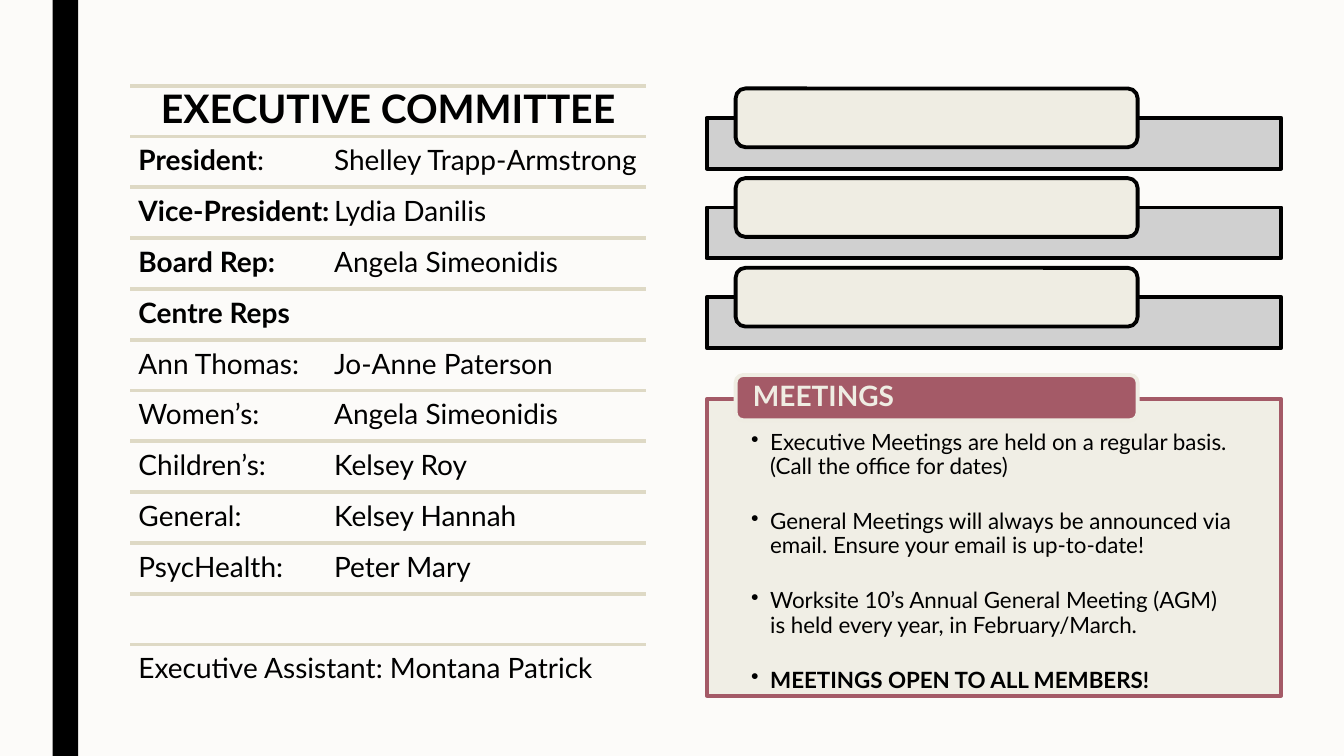
"""Build the executive committee and meetings slide."""
from lxml import etree
from pptx import Presentation
from pptx.dml.color import RGBColor
from pptx.enum.shapes import MSO_CONNECTOR, MSO_SHAPE
from pptx.enum.text import MSO_ANCHOR, PP_ALIGN
from pptx.oxml.ns import qn
from pptx.util import Cm, Pt

TITLE = "EXECUTIVE COMMITTEE"
ROWS = [
    ("President", ":\tShelley Trapp-Armstrong"),
    ("Vice-President:", "\tLydia Danilis"),
    ("Board Rep:", "\tAngela Simeonidis"),
    ("Centre Reps", ""),
    ("", "Ann Thomas:\tJo-Anne Paterson"),
    ("", "Women’s:\tAngela Simeonidis"),
    ("", "Children’s:\tKelsey Roy"),
    ("", "General:\tKelsey Hannah"),
    ("", "PsycHealth:\tPeter Mary"),
    ("", ""),
    ("", "Executive Assistant: Montana Patrick"),
]
MEETINGS_TITLE = "MEETINGS"
MEETINGS = [
    ("", "Executive Meetings are held on a regular basis. (Call the office for dates)"),
    ("", "General Meetings will always be announced via email. Ensure your email is up-to-date!"),
    ("", "Worksite 10’s Annual General Meeting (AGM) is held every year, in February/March."),
    ("MEETINGS OPEN TO ALL MEMBERS!", ""),
]

BLACK = RGBColor(0x00, 0x00, 0x00)
PAPER = RGBColor(0xFC, 0xFB, 0xF9)
CREAM = RGBColor(0xEF, 0xED, 0xE3)
RULE = RGBColor(0xDE, 0xD9, 0xC5)
GREY = RGBColor(0xCC, 0xCC, 0xCC)
ROSE = RGBColor(0xA4, 0x5A, 0x67)
FONT = "Lato"
LINE_WIDTH = Pt(2.75)

RECT = MSO_SHAPE.RECTANGLE
ROUNDED = MSO_SHAPE.ROUNDED_RECTANGLE
STRAIGHT = MSO_CONNECTOR.STRAIGHT
TOP, MIDDLE = MSO_ANCHOR.TOP, MSO_ANCHOR.MIDDLE
LEFT, CENTER = PP_ALIGN.LEFT, PP_ALIGN.CENTER

LIST_X, LIST_Y, LIST_W, ROW_H = 3.28, 2.16, 13.0, 1.28
TAB_STOP = 4.93
PANEL_X, PANEL_W, PANEL_H = 17.81, 14.48, 1.28
LABEL_X, LABEL_W, LABEL_H = 18.54, 10.13, 1.48
PANEL_Y, PANEL_STEP, LABEL_RISE = 2.97, 2.26, 0.74
PANEL_COUNT = 3
MEETINGS_Y, MEETINGS_H = 10.06, 7.47
HEAD_Y, HEAD_H = 9.45, 1.14


def add_box(s, kind, x, y, w, h, fill, line=None, alpha=None):
    sp = s.shapes.add_shape(kind, Cm(x), Cm(y), Cm(w), Cm(h))
    sp.shadow.inherit = False
    sp.fill.solid()
    sp.fill.fore_color.rgb = fill
    if alpha:
        clr = sp.fill._xPr.find(".//" + qn("a:srgbClr"))
        etree.SubElement(clr, qn("a:alpha")).set("val", str(alpha * 1000))
    if line is None:
        sp.line.fill.background()
    else:
        sp.line.color.rgb = line
        sp.line.width = LINE_WIDTH
    return sp


def set_frame(sp, anchor, left, top, right, bottom):
    tf = sp.text_frame
    tf.word_wrap = True
    tf.vertical_anchor = anchor
    tf.margin_left, tf.margin_top = Cm(left), Cm(top)
    tf.margin_right, tf.margin_bottom = Cm(right), Cm(bottom)
    return tf


def write(p, bold, plain, size, color=BLACK, align=LEFT):
    p.alignment = align
    p.line_spacing = 0.9
    for text, is_bold in ((bold, True), (plain, False)):
        if text:
            r = p.add_run()
            r.text = text
            r.font.name, r.font.size = FONT, Pt(size)
            r.font.bold = is_bold
            r.font.color.rgb = color


def add_tab(p):
    tabs = etree.SubElement(p._p.get_or_add_pPr(), qn("a:tabLst"))
    tab = etree.SubElement(tabs, qn("a:tab"))
    tab.set("pos", str(Cm(TAB_STOP)))
    tab.set("algn", "l")


def add_bullet(p):
    pPr = p._p.get_or_add_pPr()
    pPr.set("marL", str(Cm(0.48)))
    pPr.set("indent", str(-Cm(0.48)))
    etree.SubElement(pPr, qn("a:buChar")).set("char", "•")


def add_rule(s, y):
    rule = s.shapes.add_connector(STRAIGHT, Cm(LIST_X), Cm(y), Cm(LIST_X + LIST_W), Cm(y))
    rule.line.color.rgb = RULE
    rule.line.width = LINE_WIDTH
    etree.SubElement(rule._element.spPr, qn("a:effectLst"))


def add_committee(s):
    for i, (bold, plain) in enumerate([(TITLE, "")] + ROWS):
        y = LIST_Y + i * ROW_H
        add_rule(s, y)
        if not bold + plain:
            continue
        sp = s.shapes.add_textbox(Cm(LIST_X), Cm(y), Cm(LIST_W), Cm(ROW_H))
        if i == 0:
            p = set_frame(sp, MIDDLE, 0.3, 0, 0.3, 0).paragraphs[0]
            write(p, bold, plain, 28, align=CENTER)
        else:
            p = set_frame(sp, MIDDLE, 0.21, 0, 0, 0).paragraphs[0]
            write(p, bold, plain, 20)
            if "\t" in plain:
                add_tab(p)


def add_panels(s):
    for i in range(PANEL_COUNT):
        y = PANEL_Y + i * PANEL_STEP
        add_box(s, RECT, PANEL_X, y, PANEL_W, PANEL_H, GREY, BLACK, 90)
        add_box(s, ROUNDED, LABEL_X, y - LABEL_RISE, LABEL_W, LABEL_H, CREAM, BLACK)


def add_meetings(s):
    sp = add_box(s, RECT, PANEL_X, MEETINGS_Y, PANEL_W, MEETINGS_H, CREAM, ROSE, 90)
    tf = set_frame(sp, TOP, 1.12, 0.81, 1.12, 0.3)
    for i, (bold, plain) in enumerate(MEETINGS):
        p = tf.add_paragraph() if i else tf.paragraphs[0]
        write(p, bold, plain, 16)
        if i:
            p.space_before = Pt(22)
        add_bullet(p)
    head = add_box(s, ROUNDED, LABEL_X, HEAD_Y, LABEL_W, HEAD_H, ROSE, CREAM)
    tf = set_frame(head, MIDDLE, 0.38, 0, 0.38, 0)
    write(tf.paragraphs[0], MEETINGS_TITLE, "", 20, CREAM)


def main():
    prs = Presentation()
    prs.slide_width, prs.slide_height = Cm(33.87), Cm(19.05)
    s = prs.slides.add_slide(prs.slide_layouts[6])
    s.background.fill.solid()
    s.background.fill.fore_color.rgb = PAPER
    add_box(s, RECT, 1.33, 0, 0.64, 19.05, BLACK)
    add_committee(s)
    add_panels(s)
    add_meetings(s)
    prs.save("out.pptx")


if __name__ == "__main__":
    main()
